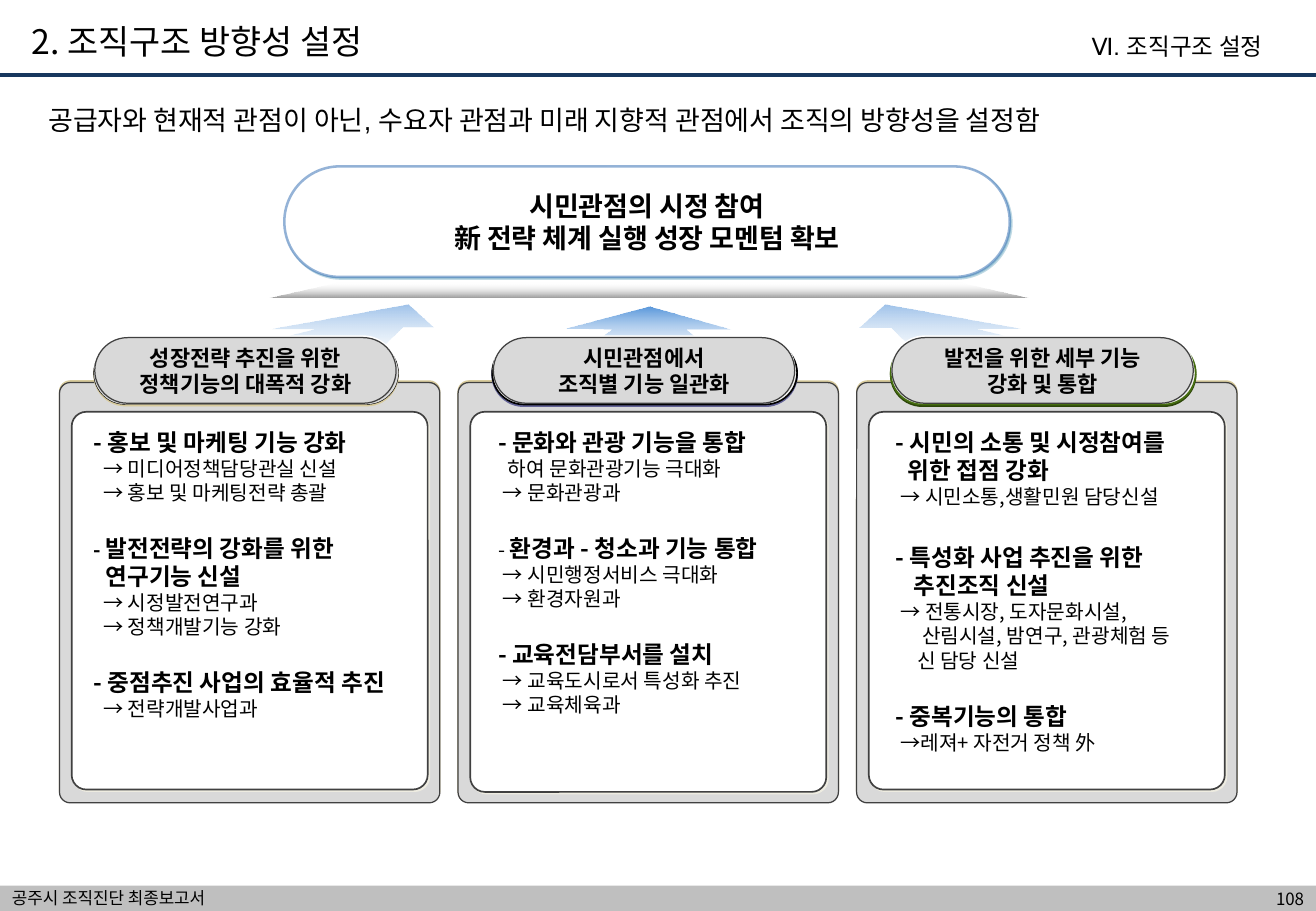
from dataclasses import dataclass

from lxml.etree import SubElement
from pptx import Presentation
from pptx.dml.color import RGBColor
from pptx.enum.shapes import MSO_CONNECTOR, MSO_SHAPE
from pptx.enum.text import MSO_ANCHOR, PP_ALIGN
from pptx.oxml.ns import qn
from pptx.util import Inches, Pt

BLACK = RGBColor(0x00, 0x00, 0x00)
WHITE = RGBColor(0xFF, 0xFF, 0xFF)
NAVY = RGBColor(0x17, 0x37, 0x5E)
DARK = RGBColor(0x40, 0x40, 0x40)
FOOTER_GRAY = RGBColor(0xBF, 0xBF, 0xBF)
PANEL_GRAY = RGBColor(0xD9, 0xD9, 0xD9)
PALE_GRAY = RGBColor(0xF2, 0xF2, 0xF2)
CAST_GRAY = RGBColor(0x96, 0x96, 0x96)
BLUE = RGBColor(0x4F, 0x81, 0xBD)
BLUE_SHADOW = RGBColor(0x95, 0xC0, 0xD3)
ARROW_BLUE = RGBColor(0x57, 0x96, 0xDB)
ARROW_PALE = RGBColor(0x9E, 0xC2, 0xEA)
SAND = RGBColor(0xD8, 0xCB, 0x9C)
CREAM = RGBColor(0xEE, 0xEC, 0xE1)
PURPLE = RGBColor(0x66, 0x66, 0x99)
GREEN = RGBColor(0x46, 0x6E, 0x10)
DARK_GREEN = RGBColor(0x2D, 0x46, 0x0A)
KOREAN_FONT = "Noto Sans CJK KR"
SLIDE_WIDTH = 10.83
COLUMN_LEFT, COLUMN_PITCH = 0.49, 3.28


@dataclass
class Line:
    text: str
    size: float = 12
    bold: bool = False
    indent: float = 0
    before: float = 0
    dash_bold: bool | None = None


def heading(text, before=17.4, **options):
    return Line(text, size=14, bold=True, before=before, **options)


def add_run(paragraph, text, size, bold, font):
    run = paragraph.add_run()
    run.text = text
    run.font.size = Pt(size)
    run.font.bold = bold
    run.font.name = font
    run.font.color.rgb = BLACK
    SubElement(run.font._element, qn("a:ea"), typeface=KOREAN_FONT)


def write_text(shape, lines, font=KOREAN_FONT, align=PP_ALIGN.LEFT,
               anchor=MSO_ANCHOR.TOP, spacing=None, wrap=True):
    frame = shape.text_frame
    frame.word_wrap = wrap
    frame.vertical_anchor = anchor
    frame.margin_left = frame.margin_right = Inches(0.1)
    frame.margin_top = frame.margin_bottom = Inches(0.05)
    for index, line in enumerate(lines):
        paragraph = frame.add_paragraph() if index else frame.paragraphs[0]
        paragraph.alignment = align
        paragraph.space_before = Pt(line.before)
        if spacing:
            paragraph.line_spacing = spacing
        if line.indent:
            properties = paragraph._p.get_or_add_pPr()
            properties.set("marL", str(Inches(line.indent)))
            properties.set("indent", "0")
        if line.dash_bold is not None:
            add_run(paragraph, "- ", 12, line.dash_bold, font)
        add_run(paragraph, line.text, line.size, line.bold, font)


def add_label(slide, left, top, width, height, lines, **options):
    box = slide.shapes.add_textbox(Inches(left), Inches(top), Inches(width), Inches(height))
    write_text(box, lines, **options)


def set_alpha(color, percent):
    SubElement(color, qn("a:alpha"), val=str(percent * 1000))


def add_rounded(slide, left, top, width, height, radius, fill, line, weight, shadow):
    shape = slide.shapes.add_shape(MSO_SHAPE.ROUNDED_RECTANGLE, Inches(left), Inches(top),
                                   Inches(width), Inches(height))
    shape.adjustments[0] = radius
    shape.fill.solid()
    shape.fill.fore_color.rgb = fill
    shape.line.color.rgb = line
    shape.line.width = Pt(weight)
    shape.shadow.inherit = False
    color, distance, angle = shadow
    effects = shape.element.spPr.find(qn("a:effectLst"))
    outer = SubElement(effects, qn("a:outerShdw"), blurRad="0", dist=str(Pt(distance)),
                       dir=str(angle * 60000), algn="ctr", rotWithShape="0")
    SubElement(outer, qn("a:srgbClr"), val=str(color))
    return shape


def add_fade(slide, points, top_color, bottom_color, clear_stop):
    vertices = [(Inches(x), Inches(y)) for x, y in points]
    builder = slide.shapes.build_freeform(*vertices[0], scale=1.0)
    builder.add_line_segments(vertices[1:], close=True)
    shape = builder.convert_to_shape()
    shape.fill.gradient()
    shape.fill.gradient_angle = 270
    for stop, position, color in zip(shape.fill.gradient_stops, (0, 1), (top_color, bottom_color)):
        stop.position = position
        stop.color.rgb = color
    set_alpha(list(shape.element.iter(qn("a:srgbClr")))[clear_stop], 0)
    shape.line.fill.background()
    shape.shadow.inherit = False


def add_header(slide):
    rule = slide.shapes.add_connector(MSO_CONNECTOR.STRAIGHT, 0, Inches(0.62),
                                      Inches(SLIDE_WIDTH), Inches(0.62))
    rule.line.color.rgb = NAVY
    rule.line.width = Pt(2.5)
    SubElement(rule._element.spPr, qn("a:effectLst"))
    title = slide.shapes.title
    title.left, title.top = Inches(0.16), Inches(0.16)
    title.width, title.height = Inches(5), Inches(0.4)
    write_text(title, [Line("2. 조직구조 방향성 설정", 20)], spacing=0.9)
    add_label(slide, 7.49, 0.21, 3, 0.34, [Line("Ⅵ. 조직구조 설정", 14)],
              font="Arial", align=PP_ALIGN.RIGHT)
    add_label(slide, 0.3, 0.75, 10.24, 0.42,
              [Line("공급자와 현재적 관점이 아닌, 수요자 관점과 미래 지향적 관점에서 조직의 방향성을 설정함", 16)],
              font="Arial", spacing=1.2)


def add_footer(slide, top, height):
    bar = slide.shapes.add_shape(MSO_SHAPE.RECTANGLE, 0, Inches(top),
                                 Inches(SLIDE_WIDTH), Inches(height))
    bar.fill.solid()
    bar.fill.fore_color.rgb = FOOTER_GRAY
    bar.line.fill.background()
    bar.shadow.inherit = False
    add_label(slide, 0, top - 0.03, 5.42, 0.27, [Line("공주시 조직진단 최종보고서", 10)])
    add_label(slide, 9.53, top, 1.3, height, [Line("108", 10)],
              align=PP_ALIGN.RIGHT, anchor=MSO_ANCHOR.MIDDLE)


def add_arrows(slide):
    middle = [(4.66, 2.7), (5.35, 2.52), (6.03, 2.71), (5.65, 2.71),
              (6.04, 3.03), (4.61, 3.03), (5.03, 2.71)]
    left = [(3.36, 2.51), (3.57, 2.7), (3.31, 2.7), (2.93, 3.07),
            (1.16, 3.07), (2.6, 2.71), (2.24, 2.71)]
    right = [(10.64 - x, y) for x, y in left]
    add_fade(slide, middle, ARROW_BLUE, WHITE, 1)
    for points in (left, right):
        add_fade(slide, points, ARROW_PALE, WHITE, 1)


def add_goal(slide, left, top, width, height):
    cast = [(left - 0.13, top + 1.08), (left + 0.45, top + 0.96),
            (left + width - 0.41, top + 0.96), (left + width + 0.17, top + 1.08)]
    goal = add_rounded(slide, left, top, width, height, 0.5, WHITE, BLUE, 1.5,
                       (BLUE_SHADOW, 1.4, 45))
    set_alpha(goal.element.spPr.find(qn("a:ln")).find(".//" + qn("a:srgbClr")), 60)
    write_text(goal, [Line("시민관점의 시정 참여", 16, True),
                      Line("新 전략 체계 실행 성장 모멘텀 확보", 16, True)],
               align=PP_ALIGN.CENTER, anchor=MSO_ANCHOR.MIDDLE)
    add_fade(slide, cast, WHITE, CAST_GRAY, 0)


def add_column(slide, left, top, column):
    add_rounded(slide, left, top + 0.37, 3.13, 3.46, 0.028, PANEL_GRAY, DARK, 0.75, (SAND, 1, 270))
    add_rounded(slide, left + 0.1, top + 0.61, 2.93, column["inner_height"], 0.041,
                WHITE, DARK, 1, (CREAM, 1.4, 45))
    fill, line, weight, shadow = column["rim"]
    add_rounded(slide, left + 0.28, top + 0.03, 2.51, 0.52, 0.5, fill, line, weight, (shadow, 1, 90))
    add_label(slide, left + column["text_offset"], top + 0.69, 2.95, 2.7, column["lines"])
    caption = add_rounded(slide, left + 0.29, top, 2.48, 0.54, 0.5, PANEL_GRAY, DARK, 0.75,
                          (WHITE, 1, 270))
    write_text(caption, [Line(text, 13, True) for text in column["caption"]],
               align=PP_ALIGN.CENTER, anchor=MSO_ANCHOR.MIDDLE, wrap=False)


COLUMNS = [
    dict(caption=["성장전략 추진을 위한", "정책기능의 대폭적 강화"], inner_height=3.11,
         rim=(PANEL_GRAY, BLACK, 0.25, SAND), text_offset=0.18, lines=[
             heading("- 홍보 및 마케팅 기능 강화", 0),
             Line("→ 미디어정책담당관실 신설", indent=0.08),
             Line("→ 홍보 및 마케팅전략 총괄", indent=0.08),
             heading("발전전략의 강화를 위한", dash_bold=True),
             heading("연구기능 신설", 0, indent=0.1),
             Line("→ 시정발전연구과", indent=0.08),
             Line("→ 정책개발기능 강화", indent=0.08),
             heading("- 중점추진 사업의 효율적 추진"),
             Line("→ 전략개발사업과", indent=0.08)]),
    dict(caption=["시민관점에서", "조직별 기능 일관화"], inner_height=3.13,
         rim=(PALE_GRAY, BLACK, 1, PURPLE), text_offset=0.23, lines=[
             heading("- 문화와 관광 기능을 통합", 0),
             Line("하여 문화관광기능 극대화", indent=0.08),
             Line("→ 문화관광과", indent=0.04),
             heading("환경과 - 청소과 기능 통합", dash_bold=False),
             Line("→ 시민행정서비스 극대화", indent=0.04),
             Line("→ 환경자원과", indent=0.04),
             heading("- 교육전담부서를 설치"),
             Line("→ 교육도시로서 특성화 추진", indent=0.04),
             Line("→ 교육체육과", indent=0.04)]),
    dict(caption=["발전을 위한 세부 기능", "강화 및 통합"], inner_height=3.11,
         rim=(PALE_GRAY, GREEN, 1, DARK_GREEN), text_offset=0.22, lines=[
             heading("- 시민의 소통 및 시정참여를", 0),
             heading("위한 접점 강화", 0, indent=0.1),
             Line("→ 시민소통,생활민원 담당신설", indent=0.04),
             heading("- 특성화 사업 추진을 위한", 20.3),
             heading("추진조직 신설", 0, indent=0.15),
             Line("→ 전통시장, 도자문화시설,", indent=0.04),
             Line("산림시설, 밤연구, 관광체험 등", indent=0.22),
             Line("신 담당 신설", indent=0.18),
             heading("- 중복기능의 통합"),
             Line("→레져+ 자전거 정책 外", indent=0.04)]),
]


def main():
    presentation = Presentation()
    presentation.slide_width = Inches(SLIDE_WIDTH)
    presentation.slide_height = Inches(7.5)
    slide = presentation.slides.add_slide(presentation.slide_layouts[5])
    add_footer(slide, 7.29, 0.21)
    add_header(slide)
    add_arrows(slide)
    add_goal(slide, 2.34, 1.37, 5.97, 0.91)
    for index, column in enumerate(COLUMNS):
        add_column(slide, COLUMN_LEFT + index * COLUMN_PITCH, 2.78, column)
    presentation.save("out.pptx")


if __name__ == "__main__":
    main()
